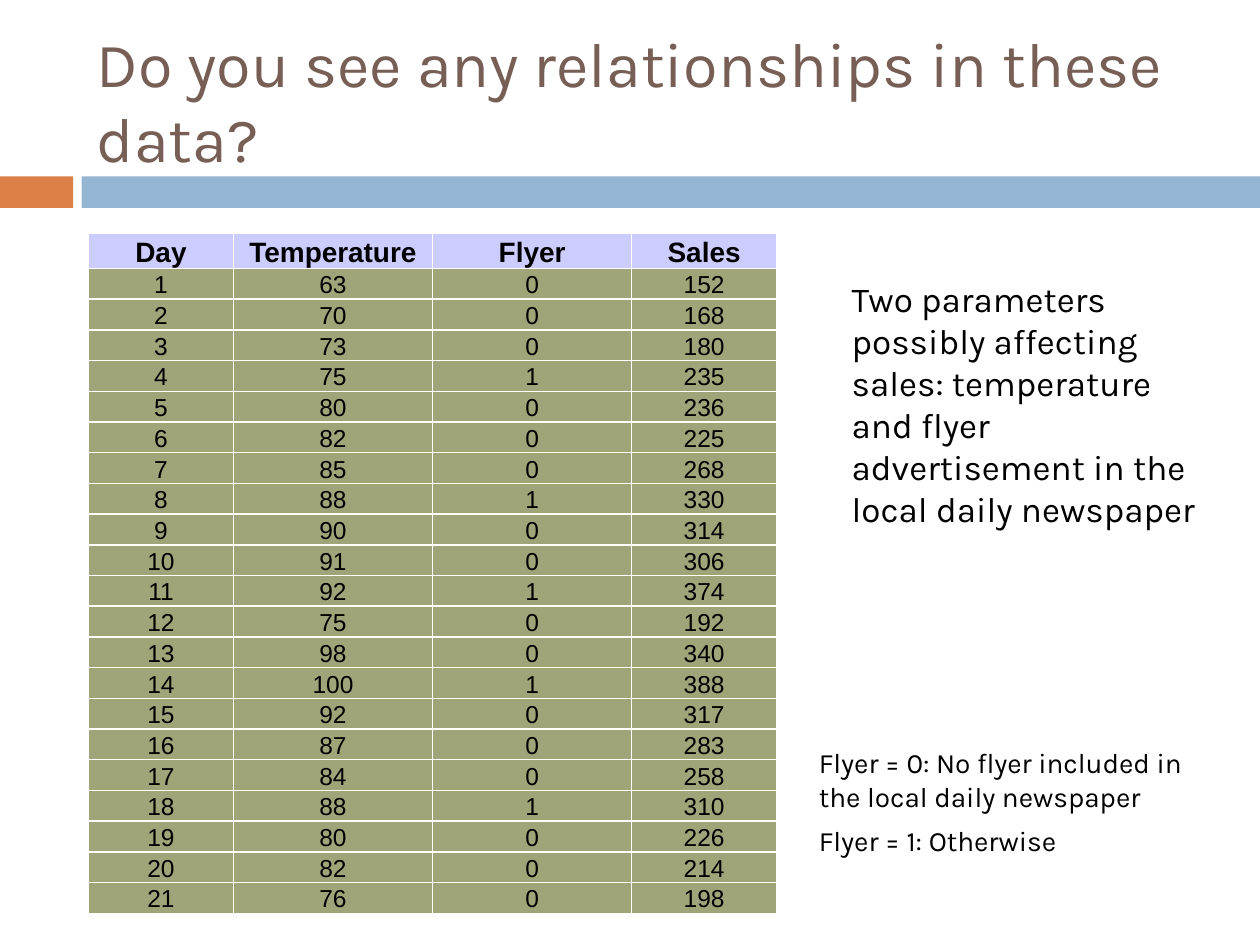
from dataclasses import dataclass

from lxml import etree
from pptx import Presentation
from pptx.dml.color import RGBColor
from pptx.enum.shapes import MSO_SHAPE
from pptx.enum.text import MSO_ANCHOR, MSO_AUTO_SIZE, PP_ALIGN
from pptx.oxml.ns import qn
from pptx.slide import Slide
from pptx.table import _Cell
from pptx.text.text import _Paragraph
from pptx.util import Pt

RECTANGLE = MSO_SHAPE.RECTANGLE
MIDDLE, TOP, BOTTOM = MSO_ANCHOR.MIDDLE, MSO_ANCHOR.TOP, MSO_ANCHOR.BOTTOM
FIT_SHAPE, NO_FIT = MSO_AUTO_SIZE.SHAPE_TO_FIT_TEXT, MSO_AUTO_SIZE.NONE
CENTER = PP_ALIGN.CENTER

COLORS = {
    "orange": "DD8047",
    "blue": "94B6D2",
    "brown": "775F55",
    "black": "000000",
    "white": "FFFFFF",
    "lavender": "CCCCFF",
    "olive": "9FA578",
}

HEADINGS = ("Day", "Temperature", "Flyer", "Sales")
TEMPERATURES = (63, 70, 73, 75, 80, 82, 85, 88, 90, 91, 92,
                75, 98, 100, 92, 87, 84, 88, 80, 82, 76)
FLYER_DAYS = (4, 8, 11, 14, 18)
SALES = (152, 168, 180, 235, 236, 225, 268, 330, 314, 306, 374,
         192, 340, 388, 317, 283, 258, 310, 226, 214, 198)
COLUMN_WIDTHS = (82.8, 113.8, 113.8, 82.8)
HEADING_HEIGHT = 20
DAY_HEIGHT = 17.56


@dataclass(frozen=True)
class Band:
    left: float
    width: float
    color: str


@dataclass(frozen=True)
class Passage:
    left: float
    top: float
    width: float
    height: float
    paragraphs: tuple[str, ...]
    size: float
    color: str = "black"
    anchor: MSO_ANCHOR = TOP
    fit: MSO_AUTO_SIZE = FIT_SHAPE


@dataclass(frozen=True)
class RowStyle:
    size: float
    bold: bool
    fill: str


BANDS = (Band(0, 41.8, "orange"), Band(46.6, 673.4, "blue"))
PASSAGES = (
    Passage(48.2, 18, 642.2, 77.8,
            ("Do you see any relationships in these data?",),
            36, "brown", MIDDLE, NO_FIT),
    Passage(479.6, 154.8, 224.6, 128.2,
            ("Two parameters possibly affecting sales: temperature and flyer "
             "advertisement in the local daily newspaper",), 20),
    Passage(460.8, 422.6, 224.6, 71.3,
            ("Flyer = 0: No flyer included in the local daily newspaper",
             "Flyer = 1: Otherwise"), 16),
)
HEADING_STYLE = RowStyle(16, True, "lavender")
DAY_STYLE = RowStyle(14, False, "olive")


def rgb(color: str) -> RGBColor:
    return RGBColor.from_string(COLORS[color])


def format_runs(paragraph: _Paragraph, font: str, size: float, color: str,
                bold: bool = False) -> None:
    for run in paragraph.runs:
        run.font.name = font
        run.font.size = Pt(size)
        run.font.bold = bold
        run.font.color.rgb = rgb(color)


def draw_band(slide: Slide, band: Band) -> None:
    bar = slide.shapes.add_shape(RECTANGLE, Pt(band.left), Pt(100.8),
                                 Pt(band.width), Pt(18))
    bar.shadow.inherit = False
    bar.fill.solid()
    bar.fill.fore_color.rgb = rgb(band.color)
    bar.line.fill.background()


def draw_passage(slide: Slide, passage: Passage) -> None:
    frame = slide.shapes.add_textbox(Pt(passage.left), Pt(passage.top),
                                     Pt(passage.width), Pt(passage.height)).text_frame
    frame.word_wrap = True
    frame.auto_size = passage.fit
    frame.vertical_anchor = passage.anchor
    frame.text = "\n".join(passage.paragraphs)
    for index, paragraph in enumerate(frame.paragraphs):
        paragraph.space_before = Pt(6 if index else 0)
        format_runs(paragraph, "Karla", passage.size, passage.color)


def add_borders(cell: _Cell) -> None:
    properties = cell._tc.get_or_add_tcPr()
    for side in ("a:lnL", "a:lnR", "a:lnT", "a:lnB"):
        border = etree.SubElement(properties, qn(side), w=str(Pt(1)))
        fill = etree.SubElement(border, qn("a:solidFill"))
        etree.SubElement(fill, qn("a:srgbClr"), val=COLORS["white"])


def fill_cell(cell: _Cell, text: str, style: RowStyle) -> None:
    add_borders(cell)
    cell.fill.solid()
    cell.fill.fore_color.rgb = rgb(style.fill)
    cell.margin_left = cell.margin_right = cell.margin_top = Pt(0.72)
    cell.margin_bottom = Pt(0)
    cell.vertical_anchor = BOTTOM
    cell.text_frame.text = text
    paragraph = cell.text_frame.paragraphs[0]
    paragraph.alignment = CENTER
    format_runs(paragraph, "Arial", style.size, "black", style.bold)


def draw_sales_table(slide: Slide) -> None:
    days = [(day, temperature, int(day in FLYER_DAYS), sales)
            for day, (temperature, sales) in enumerate(zip(TEMPERATURES, SALES), 1)]
    rows = [HEADINGS, *days]
    height = HEADING_HEIGHT + DAY_HEIGHT * len(days)
    table = slide.shapes.add_table(len(rows), len(HEADINGS), Pt(50.6), Pt(133.4),
                                   Pt(sum(COLUMN_WIDTHS)), Pt(height)).table
    table.first_row = False
    table.horz_banding = False
    for column, width in zip(table.columns, COLUMN_WIDTHS):
        column.width = Pt(width)
    for row_index, values in enumerate(rows):
        table.rows[row_index].height = Pt(DAY_HEIGHT if row_index else HEADING_HEIGHT)
        style = DAY_STYLE if row_index else HEADING_STYLE
        for column_index, value in enumerate(values):
            fill_cell(table.cell(row_index, column_index), str(value), style)


def main() -> None:
    presentation = Presentation()
    presentation.slide_width = Pt(720)
    presentation.slide_height = Pt(540)
    slide = presentation.slides.add_slide(presentation.slide_layouts[6])
    for band in BANDS:
        draw_band(slide, band)
    draw_sales_table(slide)
    for passage in PASSAGES:
        draw_passage(slide, passage)
    presentation.save("out.pptx")


if __name__ == "__main__":
    main()
